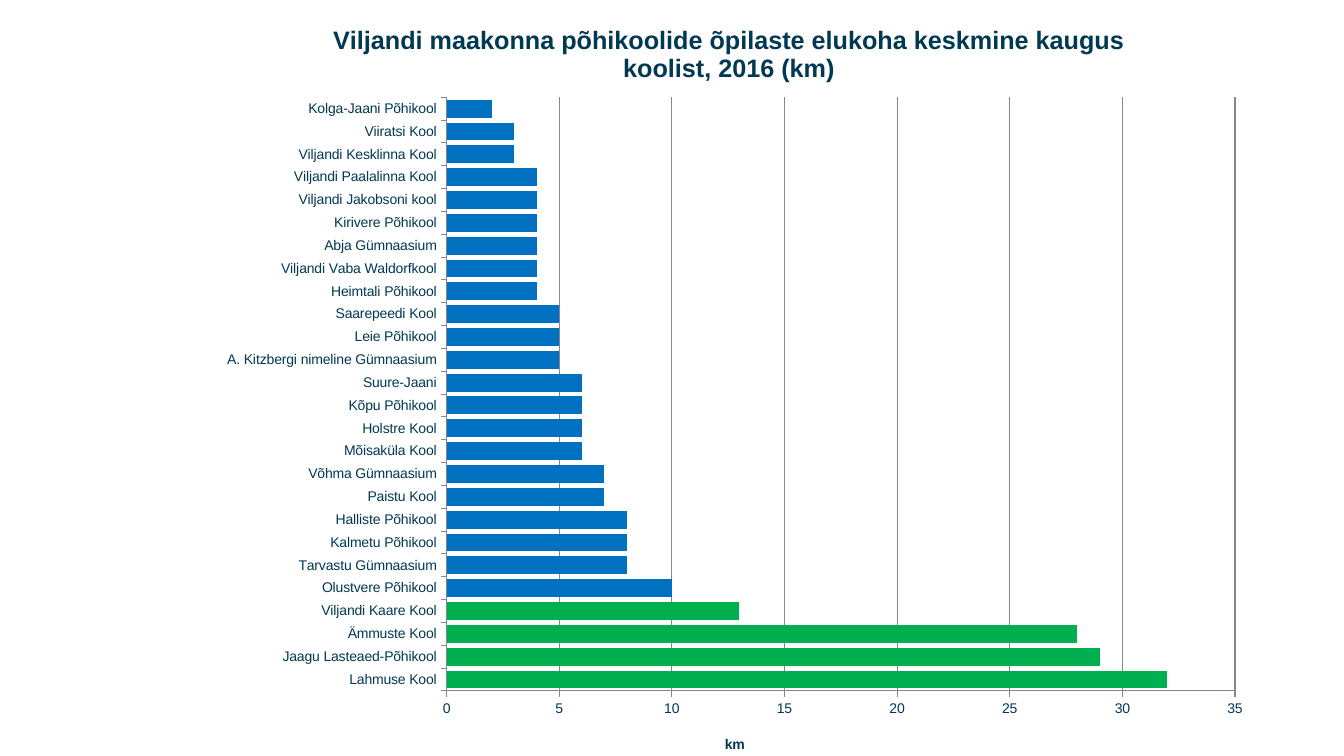
import pptx
import pptx.chart.data
import pptx.dml.color
import pptx.enum.chart
import pptx.oxml
import pptx.oxml.ns
import pptx.util

SLIDE_WIDTH = pptx.util.Inches(13.33)
SLIDE_HEIGHT = pptx.util.Inches(7.5)
NAVY, BLUE, GREEN, GREY = "003951", "0070C0", "00B050", "868690"
GREEN_SCHOOLS = 4

DISTANCES = {
    "Lahmuse Kool": 32,
    "Jaagu Lasteaed-Põhikool": 29,
    "Ämmuste Kool": 28,
    "Viljandi Kaare Kool": 13,
    "Olustvere Põhikool": 10,
    "Tarvastu Gümnaasium": 8,
    "Kalmetu Põhikool": 8,
    "Halliste Põhikool": 8,
    "Paistu Kool": 7,
    "Võhma Gümnaasium": 7,
    "Mõisaküla Kool": 6,
    "Holstre Kool": 6,
    "Kõpu Põhikool": 6,
    "Suure-Jaani": 6,
    "A. Kitzbergi nimeline Gümnaasium": 5,
    "Leie Põhikool": 5,
    "Saarepeedi Kool": 5,
    "Heimtali Põhikool": 4,
    "Viljandi Vaba Waldorfkool": 4,
    "Abja Gümnaasium": 4,
    "Kirivere Põhikool": 4,
    "Viljandi Jakobsoni kool": 4,
    "Viljandi Paalalinna Kool": 4,
    "Viljandi Kesklinna Kool": 3,
    "Viiratsi Kool": 3,
    "Kolga-Jaani Põhikool": 2,
}


def rgb(code):
    """Return the colour for a hex string."""
    return pptx.dml.color.RGBColor.from_string(code)


def style_font(font, size, bold=False):
    """Give a font the slide's typeface and colour."""
    font.name = "Arial"
    font.size = pptx.util.Pt(size)
    font.bold = bold
    font.color.rgb = rgb(NAVY)


def place(element, x, y, width=None, height=None):
    """Fix a chart part at shares of the chart's size."""
    for old in element.findall(pptx.oxml.ns.qn("c:layout")):
        element.remove(old)
    settings = [("xMode", "edge"), ("yMode", "edge"), ("x", x), ("y", y)]
    if width:
        settings = [("layoutTarget", "inner")] + settings + [("w", width), ("h", height)]
    inner = "".join(f'<c:{tag} val="{value}"/>' for tag, value in settings)
    layout = pptx.oxml.parse_xml(
        f'<c:layout {pptx.oxml.ns.nsdecls("c")}>'
        f"<c:manualLayout>{inner}</c:manualLayout></c:layout>"
    )
    has_text = element.find(pptx.oxml.ns.qn("c:tx")) is not None
    element.insert(1 if has_text else 0, layout)


def write_title(title, text, size, x, y):
    """Write, format and place a chart or axis title."""
    title.text_frame.text = text
    style_font(title.text_frame.paragraphs[0].runs[0].font, size, bold=True)
    place(title._element, x, y)


def style_line(line):
    """Make a line thin and grey."""
    line.color.rgb = rgb(GREY)
    line.width = pptx.util.Pt(0.75)


def style_axis(axis):
    """Give an axis outward ticks, a grey line and small labels."""
    axis.major_tick_mark = pptx.enum.chart.XL_TICK_MARK.OUTSIDE
    axis.minor_tick_mark = pptx.enum.chart.XL_TICK_MARK.NONE
    style_line(axis.format.line)
    style_font(axis.tick_labels.font, 10)


def style_bars(plot):
    """Colour the bars, with the most distant schools in green."""
    plot.gap_width = 28
    plot.vary_by_categories = False
    schools = plot.series[0]
    schools.invert_if_negative = False
    schools.format.fill.solid()
    schools.format.fill.fore_color.rgb = rgb(BLUE)
    for index in range(GREEN_SCHOOLS):
        fill = schools.points[index].format.fill
        fill.solid()
        fill.fore_color.rgb = rgb(GREEN)


def add_distance_chart(slide):
    """Add the bar chart of mean distances to school."""
    data = pptx.chart.data.CategoryChartData()
    data.categories = list(DISTANCES)
    data.add_series("Series 1", list(DISTANCES.values()))
    chart = slide.shapes.add_chart(
        pptx.enum.chart.XL_CHART_TYPE.BAR_CLUSTERED,
        int(SLIDE_WIDTH * 0.1287), 0,
        int(SLIDE_WIDTH * 0.8275), int(SLIDE_HEIGHT * 1.0293), data,
    ).chart
    style_font(chart.font, 10)
    chart.has_legend = False
    style_bars(chart.plots[0])

    kilometres = chart.value_axis
    for axis in (chart.category_axis, kilometres):
        style_axis(axis)
    kilometres.minimum_scale = 0
    kilometres.maximum_scale = 35
    kilometres.major_unit = 5
    kilometres.has_major_gridlines = True
    style_line(kilometres.major_gridlines.format.line)

    heading = "Viljandi maakonna põhikoolide õpilaste elukoha keskmine kaugus koolist, 2016 (km)"
    write_title(chart.chart_title, heading, 18, 0.14, 0.024)
    write_title(kilometres.axis_title, "km", 10, 0.494, 0.941)
    place(chart._chartSpace.chart.plotArea, 0.246, 0.125, 0.709, 0.763)


def main():
    """Build and save the slide."""
    presentation = pptx.Presentation()
    presentation.slide_width = SLIDE_WIDTH
    presentation.slide_height = SLIDE_HEIGHT
    slide = presentation.slides.add_slide(presentation.slide_layouts[6])
    add_distance_chart(slide)
    presentation.save("out.pptx")


if __name__ == "__main__":
    main()
